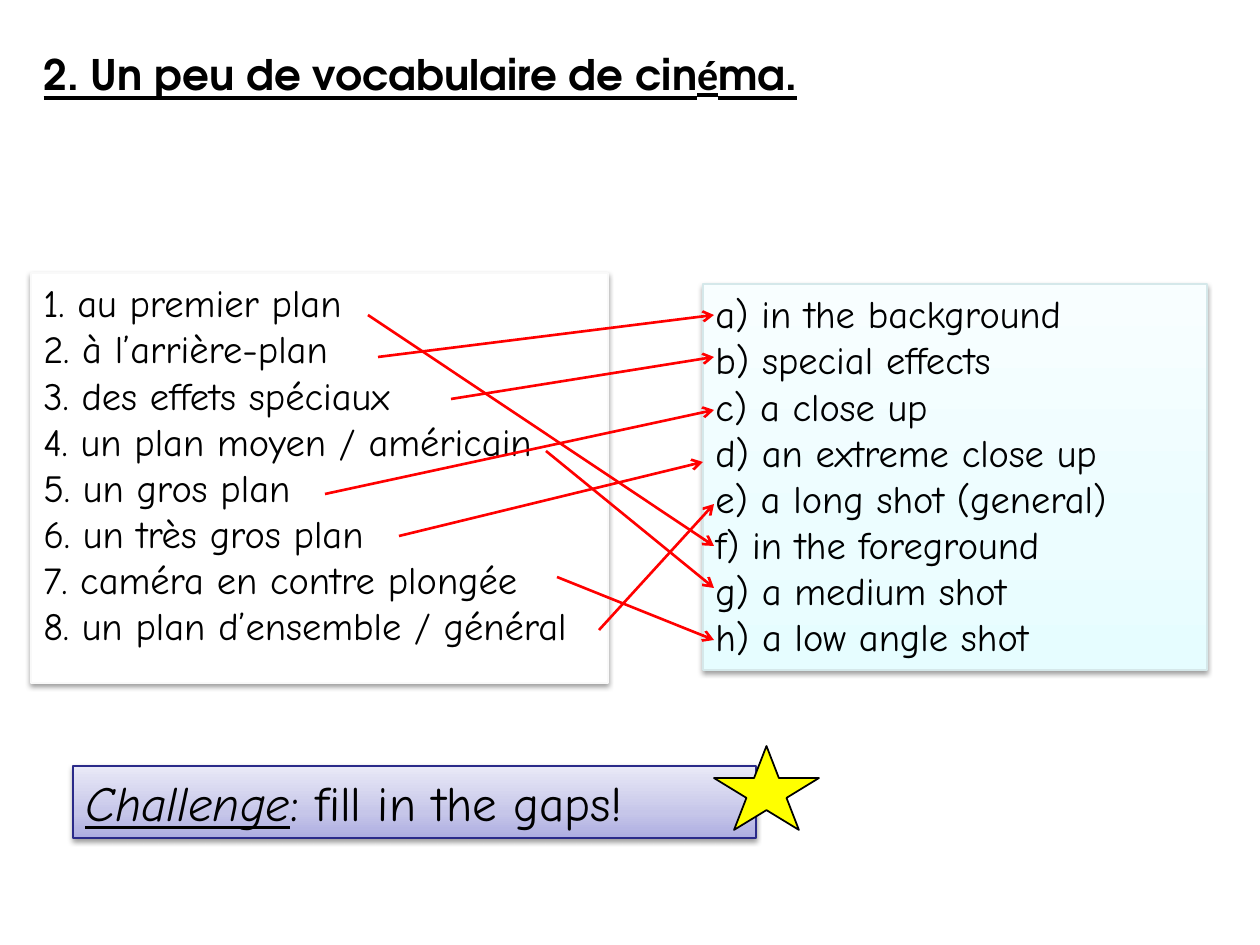
from lxml import etree
from pptx import Presentation
from pptx.dml.color import RGBColor
from pptx.enum.shapes import MSO_CONNECTOR, MSO_SHAPE
from pptx.enum.text import MSO_ANCHOR, MSO_AUTO_SIZE, PP_ALIGN
from pptx.oxml.ns import qn
from pptx.util import Inches, Pt

RECT, STAR = MSO_SHAPE.RECTANGLE, MSO_SHAPE.STAR_5_POINT
STRAIGHT = MSO_CONNECTOR.STRAIGHT
LEFT = PP_ALIGN.LEFT
TOP, MIDDLE = MSO_ANCHOR.TOP, MSO_ANCHOR.MIDDLE
NO_AUTOFIT = MSO_AUTO_SIZE.NONE
EMU_PER_PX = 914400 / 126

FRENCH = [
    "1. au premier plan",
    "2. à l’arrière-plan",
    "3. des effets spéciaux",
    "4. un plan moyen / américain",
    "5. un gros plan",
    "6. un très gros plan",
    "7. caméra en contre plongée",
    "8. un plan d’ensemble / général",
]
ENGLISH = [
    "a) in the background",
    "b) special effects",
    "c) a close up",
    "d) an extreme close up",
    "e) a long shot (general)",
    "f) in the foreground",
    "g) a medium shot",
    "h) a low angle shot",
]
MATCHES = [
    (368, 315, 714, 546),
    (378, 357, 714, 315),
    (451, 399, 714, 357),
    (546, 451, 714, 588),
    (325, 494, 714, 410),
    (399, 536, 703, 462),
    (557, 577, 714, 640),
    (599, 630, 714, 504),
]
AQUA = [(0, "E6FDFF"), (35, "ECFDFF"), (100, "F8FEFF")]
VIOLET = [(0, "ADADE1"), (35, "C6C6E9"), (100, "E9E9F7")]


def rgb(value):
    return RGBColor.from_string(value)


def px(*values):
    return [round(v * EMU_PER_PX) for v in values]


def add(parent, tag, **attrs):
    return etree.SubElement(parent, qn(tag), {k: str(v) for k, v in attrs.items()})


class Deck:
    title_font = {"name": "TeX Gyre Adventor", "size": Pt(24), "bold": True, "underline": True}
    body_font = {"name": "Comic Neue", "size": Pt(22)}
    ink = "000000"

    def __init__(self, prs):
        self.s = prs.slides.add_slide(prs.slide_layouts[5])

    def text(self, tf, lines, base, anchor, wrap):
        frame = {"auto_size": NO_AUTOFIT, "word_wrap": wrap, "vertical_anchor": anchor}
        for key, value in frame.items():
            setattr(tf, key, value)
        for i, runs in enumerate(lines):
            p = tf.add_paragraph() if i else tf.paragraphs[0]
            p.alignment = LEFT
            for text, changes in runs:
                r = p.add_run()
                r.text = text
                for key, value in {**base, **changes}.items():
                    setattr(r.font, key, value)
                r.font.color.rgb = rgb(self.ink)

    def title(self, box, runs):
        sp = self.s.shapes.title
        sp.left, sp.top, sp.width, sp.height = px(*box)
        self.text(sp.text_frame, [runs], self.title_font, MIDDLE, False)

    def shape(self, kind, box, fill, line, width):
        sp = self.s.shapes.add_shape(kind, *px(*box))
        sp.shadow.inherit = False
        if isinstance(fill, str):
            sp.fill.solid()
            sp.fill.fore_color.rgb = rgb(fill)
        else:
            sp.fill.gradient()
            sp.fill.gradient_angle = 90
            stops = sp._element.spPr.find(".//" + qn("a:gsLst"))
            stops.clear()
            for pos, color in fill:
                add(add(stops, "a:gs", pos=pos * 1000), "a:srgbClr", val=color)
        sp.line.color.rgb = rgb(line)
        sp.line.width = Pt(width)
        return sp

    def panel(self, box, fill, line, lines, anchor=TOP, **changes):
        sp = self.shape(RECT, box, fill, line, 0.75)
        effects = sp._element.spPr.find(qn("a:effectLst"))
        shadow = add(effects, "a:outerShdw", blurRad=Pt(3.1), dist=Pt(1.6),
                     dir=5400000, rotWithShape=0)
        add(add(shadow, "a:srgbClr", val="000000"), "a:alpha", val=38000)
        self.text(sp.text_frame, lines, {**self.body_font, **changes}, anchor, True)

    def arrow(self, ends):
        c = self.s.shapes.add_connector(STRAIGHT, *px(*ends))
        c.line.color.rgb = rgb("FF0000")
        c.line.width = Pt(1.5)
        spPr = c._element.spPr
        add(spPr.find(qn("a:ln")), "a:tailEnd", type="arrow")
        add(spPr, "a:effectLst")


def main():
    prs = Presentation()
    prs.slide_width, prs.slide_height = Inches(10), Inches(7.5)
    deck = Deck(prs)
    deck.title((31, 42, 789, 63), [
        ("2. Un peu de vocabulaire de cin", {}),
        ("é", {"name": "Calibri"}),
        ("ma.", {}),
    ])
    deck.panel((31, 273, 577, 410), "FFFFFF", "F9F9F9", [[(t, {})] for t in FRENCH])
    deck.panel((703, 284, 504, 386), AQUA, "D5E8EA", [[(t, {})] for t in ENGLISH])
    for ends in MATCHES:
        deck.arrow(ends)
    deck.panel((73, 766, 683, 72), VIOLET, "2A2A89", [[
        ("Challenge", {"italic": True, "underline": True}),
        (": fill in the gaps!", {}),
    ]], size=Pt(28))
    deck.shape(STAR, (714, 746, 105, 84), "FFFF00", "000000", 1)
    prs.save("out.pptx")


if __name__ == "__main__":
    main()
